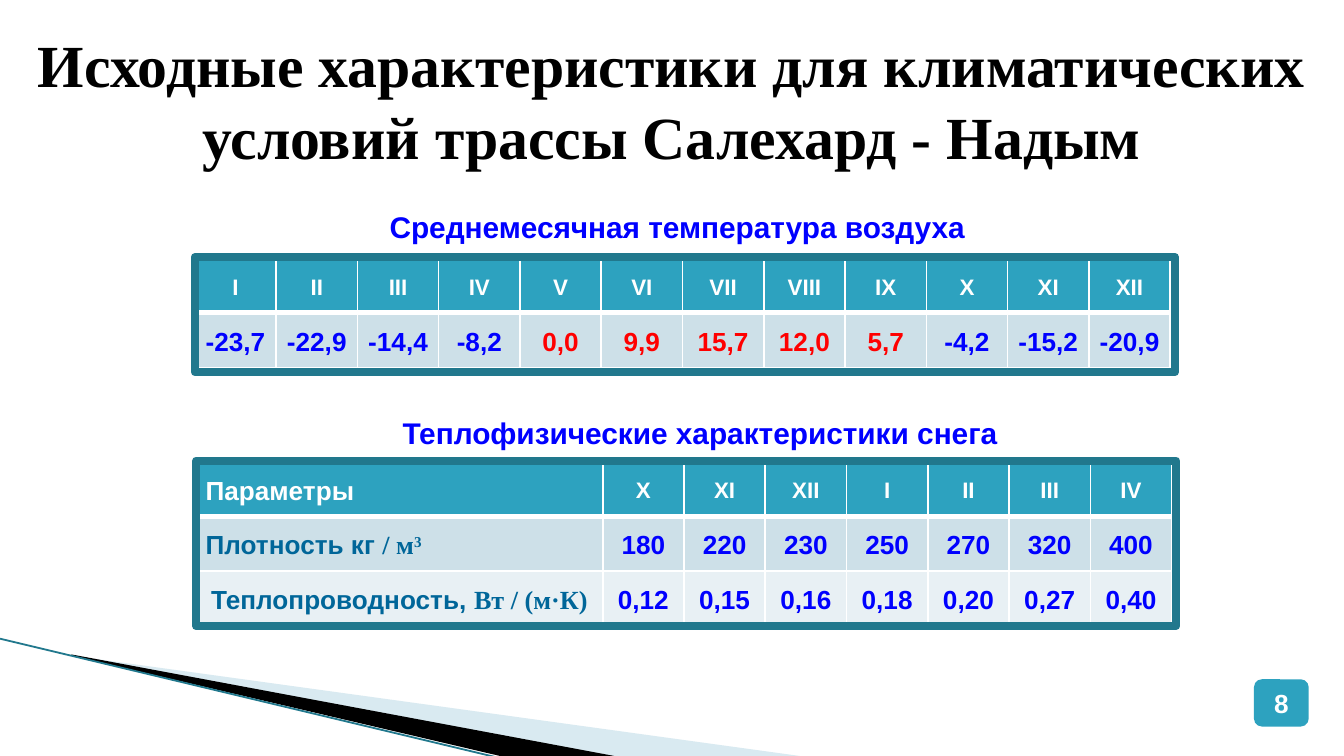
from dataclasses import dataclass

import lxml.etree
import pptx
import pptx.dml.color
import pptx.enum.shapes
import pptx.enum.text
import pptx.oxml
import pptx.oxml.ns
import pptx.util

Pt = pptx.util.Pt
Align = pptx.enum.text.PP_ALIGN
Anchor = pptx.enum.text.MSO_ANCHOR
Shape = pptx.enum.shapes.MSO_SHAPE
qn = pptx.oxml.ns.qn


@dataclass(frozen=True)
class Theme:
    sans: str = "Arial"
    serif: str = "Times New Roman"
    title_size: float = 32
    heading_size: float = 16
    body_size: float = 14
    month_size: float = 12
    white: str = "FFFFFF"
    black: str = "000000"
    accent: str = "2DA2BF"
    frame: str = "21788D"
    wedge: str = "A0CBDC"
    bands: tuple = ("CDE0E8", "E8F0F4")
    blue: str = "0000FF"
    red: str = "FF0000"
    label: str = "006699"


def rgb(value):
    return pptx.dml.color.RGBColor.from_string(value)


def style_font(font, name, size, color):
    font.name = name
    font.size = Pt(size)
    font.bold = True
    font.color.rgb = rgb(color)


class SlideBuilder:
    def __init__(self, presentation, theme):
        self.theme = theme
        self.slide = presentation.slides.add_slide(presentation.slide_layouts[5])

    def title(self, text, left, top, width, height):
        title = self.slide.shapes.title
        title.left, title.top, title.width, title.height = map(Pt, (left, top, width, height))
        frame = title.text_frame
        frame.text = text
        frame.word_wrap = True
        frame.auto_size = pptx.enum.text.MSO_AUTO_SIZE.NONE
        frame.vertical_anchor = Anchor.MIDDLE
        frame.paragraphs[0].alignment = Align.CENTER
        style_font(frame.paragraphs[0].font, self.theme.serif,
                   self.theme.title_size, self.theme.black)

    def wedge(self, points, color, opacity=None):
        """Draw a filled polygon; opacity is a percentage."""
        corners = [(Pt(x), Pt(y)) for x, y in points]
        builder = self.slide.shapes.build_freeform(*corners[0], scale=1.0)
        builder.add_line_segments(corners[1:], close=True)
        shape = builder.convert_to_shape()
        shape.shadow.inherit = False
        shape.fill.solid()
        shape.fill.fore_color.rgb = rgb(color)
        shape.line.fill.background()
        if opacity is not None:
            fill_color = shape._element.spPr.find(qn("a:solidFill"))[0]
            lxml.etree.SubElement(fill_color, qn("a:alpha"), val=str(opacity * 1000))

    def line(self, start, end, color, width):
        connector = self.slide.shapes.add_connector(
            pptx.enum.shapes.MSO_CONNECTOR.STRAIGHT, *map(Pt, (*start, *end)))
        connector.line.color.rgb = rgb(color)
        connector.line.width = Pt(width)
        lxml.etree.SubElement(connector._element.spPr, qn("a:effectLst"))

    def label(self, text, left, top, width, height, size, color, fill, kind=Shape.RECTANGLE):
        shape = self.slide.shapes.add_shape(kind, *map(Pt, (left, top, width, height)))
        shape.shadow.inherit = False
        shape.fill.solid()
        shape.fill.fore_color.rgb = rgb(fill)
        shape.line.fill.background()
        frame = shape.text_frame
        frame.word_wrap = True
        frame.vertical_anchor = Anchor.MIDDLE
        frame.margin_left = frame.margin_right = frame.margin_top = frame.margin_bottom = Pt(3)
        frame.text = text
        frame.paragraphs[0].alignment = Align.CENTER
        style_font(frame.paragraphs[0].font, self.theme.sans, size, color)

    def frame(self, left, top, width, height):
        shape = self.slide.shapes.add_shape(
            Shape.RECTANGLE, *map(Pt, (left, top, width, height)))
        shape.shadow.inherit = False
        shape.fill.background()
        shape.line.color.rgb = rgb(self.theme.frame)
        shape.line.width = Pt(4.33)
        lxml.etree.SubElement(shape._element.spPr.find(qn("a:ln")), qn("a:round"))

    def table(self, left, top, widths, row_height, rows):
        table = self.slide.shapes.add_table(
            len(rows), len(widths), Pt(left), Pt(top),
            Pt(sum(widths)), Pt(row_height * len(rows))).table
        for column, width in zip(table.columns, widths):
            column.width = Pt(width)
        for row_index, values in enumerate(rows):
            table.rows[row_index].height = Pt(row_height)
            for column_index, value in enumerate(values):
                self.cell(table.cell(row_index, column_index), row_index, value)

    def cell(self, cell, row_index, value):
        """Fill a cell; a value is a number text or a (parts, alignment, margin) label."""
        theme = self.theme
        header = row_index == 0
        is_label = isinstance(value, tuple)
        parts, alignment, margin = value if is_label else ([(value, theme.sans)], Align.CENTER, 3)
        if header:
            color = theme.white
        elif is_label:
            color = theme.label
        else:
            month_is_cold = value.startswith("-") or not self.signed
            color = theme.blue if month_is_cold else theme.red
        size = theme.month_size if header and not is_label else theme.body_size

        self.borders(cell, top=3 if row_index == 1 else 1, bottom=3 if header else 1)
        cell.fill.solid()
        cell.fill.fore_color.rgb = rgb(theme.accent if header else theme.bands[row_index - 1])
        cell.vertical_anchor = Anchor.MIDDLE
        cell.margin_left = cell.margin_right = Pt(margin)
        cell.margin_top = cell.margin_bottom = 0
        paragraph = cell.text_frame.paragraphs[0]
        paragraph.alignment = alignment
        paragraph.line_spacing = 1.15
        for text, font_name, *baseline in parts:
            run = paragraph.add_run()
            run.text = text
            style_font(run.font, font_name, size, color)
            if baseline:
                run._r.get_or_add_rPr().set("baseline", str(baseline[0] * 1000))

    def borders(self, cell, top, bottom):
        properties = cell._tc.get_or_add_tcPr()
        for side, width in (("L", 1), ("R", 1), ("T", top), ("B", bottom)):
            line = lxml.etree.SubElement(properties, qn(f"a:ln{side}"), w=str(Pt(width)))
            fill = lxml.etree.SubElement(line, qn("a:solidFill"))
            lxml.etree.SubElement(fill, qn("a:srgbClr"), val=self.theme.white)

    signed = True


def main():
    theme = Theme()
    presentation = pptx.Presentation()
    presentation.slide_width, presentation.slide_height = Pt(720), Pt(405)
    builder = SlideBuilder(presentation, theme)

    builder.wedge([(39.6, 351.4), (428.4, 405), (328.3, 405)], theme.wedge, opacity=40)
    builder.wedge([(38.2, 350.6), (329, 405), (267.8, 405), (38.9, 351.4)], theme.black)
    builder.line((-0.7, 342), (267.1, 406), theme.frame, 0.95)
    builder.title("Исходные характеристики для климатических условий трассы Салехард - Надым",
                  0, 10.8, 720, 85)

    month_width, row_height = 43.56, 29.3
    months = ["I", "II", "III", "IV", "V", "VI", "VII", "VIII", "IX", "X", "XI", "XII"]
    temperatures = ["-23,7", "-22,9", "-14,4", "-8,2", "0,0", "9,9",
                    "15,7", "12,0", "5,7", "-4,2", "-15,2", "-20,9"]
    builder.table(104.4, 138.4, [month_width] * 12, row_height, [months, temperatures])
    builder.frame(104.4, 137.7, 525, 61.7)

    headings = [("Среднемесячная температура воздуха", 122.4, 108.7),
                ("Теплофизические характеристики снега", 134.6, 219.2)]
    for text, left, top in headings:
        builder.label(text, left, top, 481, 25.2, theme.heading_size, theme.blue, theme.white)
    builder.label("8", 671.8, 363.9, 29.3, 25.3, theme.body_size, theme.white, theme.accent,
                  Shape.ROUNDED_RECTANGLE)

    parameters = ([("Параметры", theme.sans)], Align.LEFT, 5)
    density = ([("Плотность кг ", theme.sans), ("/ м", theme.serif), ("3", theme.serif, 30)],
               Align.LEFT, 5)
    conductivity = ([("Теплопроводность, ", theme.sans), ("Вт / (м·К)", theme.serif)],
                    Align.CENTER, 3)
    builder.signed = False
    builder.table(105.1, 247.3, [month_width * 5] + [month_width] * 7, row_height, [
        [parameters] + months[9:] + months[:4],
        [density, "180", "220", "230", "250", "270", "320", "400"],
        [conductivity, "0,12", "0,15", "0,16", "0,18", "0,20", "0,27", "0,40"],
    ])
    builder.frame(105.1, 246.8, 525, 88.6)

    presentation.save("out.pptx")


if __name__ == "__main__":
    main()
